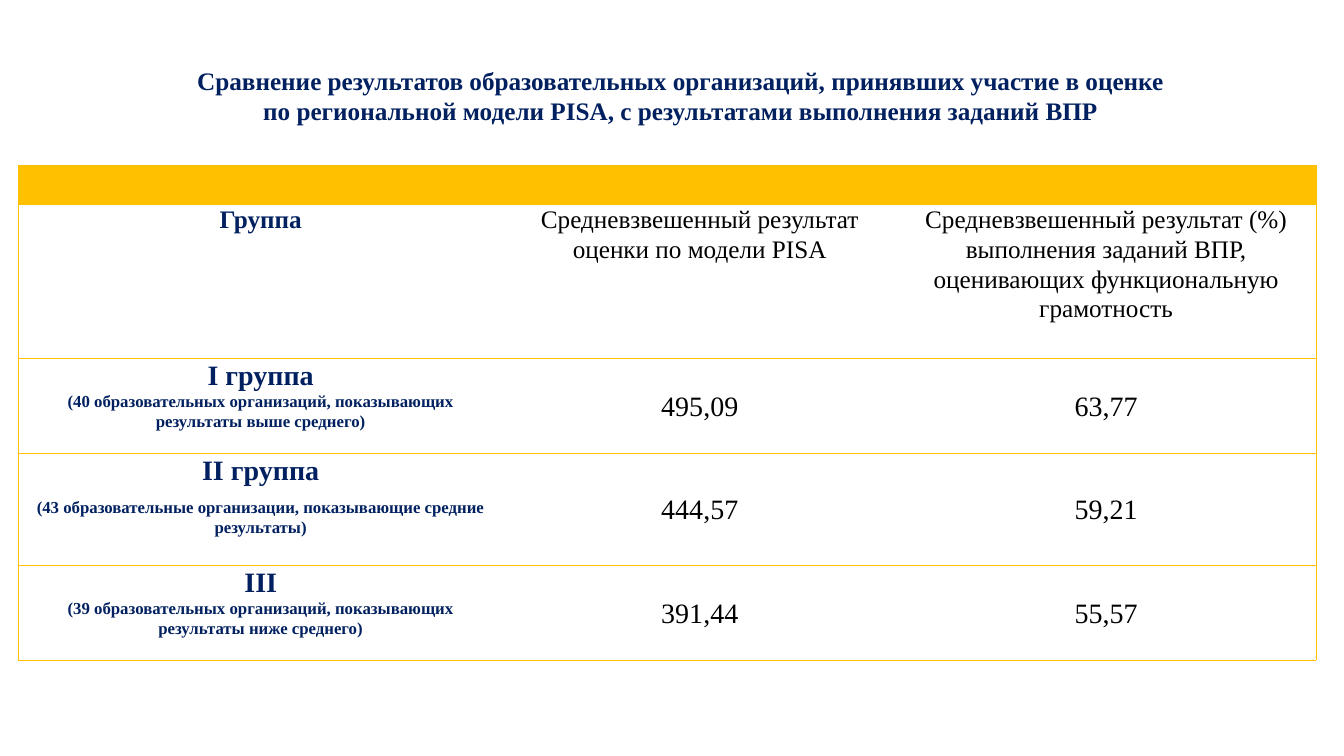
from lxml.etree import SubElement as Sub
from pptx import Presentation
from pptx.dml.color import RGBColor as Rgb
from pptx.enum.text import MSO_ANCHOR as Anchor, PP_ALIGN as Align
from pptx.oxml.ns import qn
from pptx.util import Cm, Pt

NAVY = Rgb(0x00, 0x20, 0x60)
BLACK = Rgb(0x00, 0x00, 0x00)
GOLD = Rgb(0xFF, 0xC0, 0x00)
WHITE = Rgb(0xFF, 0xFF, 0xFF)
FONT = "Times New Roman"

TITLE = ("Сравнение результатов образовательных организаций, принявших участие "
         "в оценке по региональной модели PISA, с результатами выполнения заданий ВПР")
HEADS = ["Средневзвешенный результат оценки по модели PISA",
         "Средневзвешенный результат (%) выполнения заданий ВПР, "
         "оценивающих функциональную грамотность"]
# Group name, note, gap before the note in points, scores
GROUPS = [
    ("I группа", "(40 образовательных организаций, показывающих "
     "результаты выше среднего)", 0, ("495,09", "63,77")),
    ("II группа", "(43 образовательные организации, показывающие "
     "средние результаты)", 8, ("444,57", "59,21")),
    ("III", "(39 образовательных организаций, показывающих "
     "результаты ниже среднего)", 0, ("391,44", "55,57")),
]
COLS = [12.22, 9.91, 10.57]
ROWS = [0.97, 3.89, 2.39, 2.82, 2.39]


def add_run(para, text, size, color, bold):
    run = para.add_run()
    run.text = text
    font = run.font
    font.name, font.size, font.bold = FONT, Pt(size), bold
    font.color.rgb = color


def add_line(cell, text, size, color=BLACK, bold=False, gap=0):
    para = cell.text_frame.paragraphs[0]
    if para.runs:
        para = cell.text_frame.add_paragraph()
    para.alignment = Align.CENTER
    para.line_spacing = 1.07
    para.space_before = Pt(gap)
    add_run(para, text, size, color, bold)


def set_edge(cell, side, shown):
    props = cell._tc.get_or_add_tcPr()
    line = Sub(props, qn(f"a:ln{side}"), w=str(Pt(0.5)))
    if shown:
        fill = Sub(line, qn("a:solidFill"))
        Sub(fill, qn("a:srgbClr"), val=str(GOLD))
    else:
        Sub(line, qn("a:noFill"))


def style_cell(cell, row, col):
    cell.margin_left = cell.margin_right = Cm(0.19)
    cell.margin_top = cell.margin_bottom = 0
    # Only the outer sides have vertical lines
    shown = {"L": col == 0, "R": row == 0 or col == len(COLS) - 1,
             "T": True, "B": True}
    for side, flag in shown.items():
        set_edge(cell, side, flag)
    cell.fill.solid()
    cell.fill.fore_color.rgb = WHITE if row else GOLD


def add_title(slide):
    title = slide.shapes.title
    title.left, title.top = Cm(4.55), Cm(1.52)
    title.width, title.height = Cm(25.2), Cm(1.8)
    frame = title.text_frame
    frame.word_wrap = True
    frame.vertical_anchor = Anchor.TOP
    para = frame.paragraphs[0]
    para.alignment = Align.CENTER
    add_run(para, TITLE, 18, NAVY, True)


def add_grid(slide):
    frame = slide.shapes.add_table(len(ROWS), len(COLS), Cm(0.46), Cm(4.17),
                                   Cm(sum(COLS)), Cm(sum(ROWS)))
    table = frame.table
    table.first_row = table.horz_banding = False
    for col, width in zip(table.columns, COLS):
        col.width = Cm(width)
    for row, height in zip(table.rows, ROWS):
        row.height = Cm(height)
    for row in range(len(ROWS)):
        for col in range(len(COLS)):
            style_cell(table.cell(row, col), row, col)
    table.cell(0, 0).merge(table.cell(0, len(COLS) - 1))
    return table


def fill_grid(table):
    # Column heads
    add_line(table.cell(1, 0), "Группа", 18, NAVY, True)
    for col, head in enumerate(HEADS, 1):
        add_line(table.cell(1, col), head, 18)
    # Groups and their scores
    for row, (name, note, gap, scores) in enumerate(GROUPS, 2):
        cell = table.cell(row, 0)
        add_line(cell, name, 20, NAVY, True)
        add_line(cell, note, 12, NAVY, True, gap)
        for col, score in enumerate(scores, 1):
            cell = table.cell(row, col)
            cell.vertical_anchor = Anchor.MIDDLE
            add_line(cell, score, 20)


def main():
    deck = Presentation()
    deck.slide_width, deck.slide_height = Cm(33.87), Cm(19.05)
    slide = deck.slides.add_slide(deck.slide_layouts[5])
    add_title(slide)
    fill_grid(add_grid(slide))
    deck.save("out.pptx")


if __name__ == "__main__":
    main()
